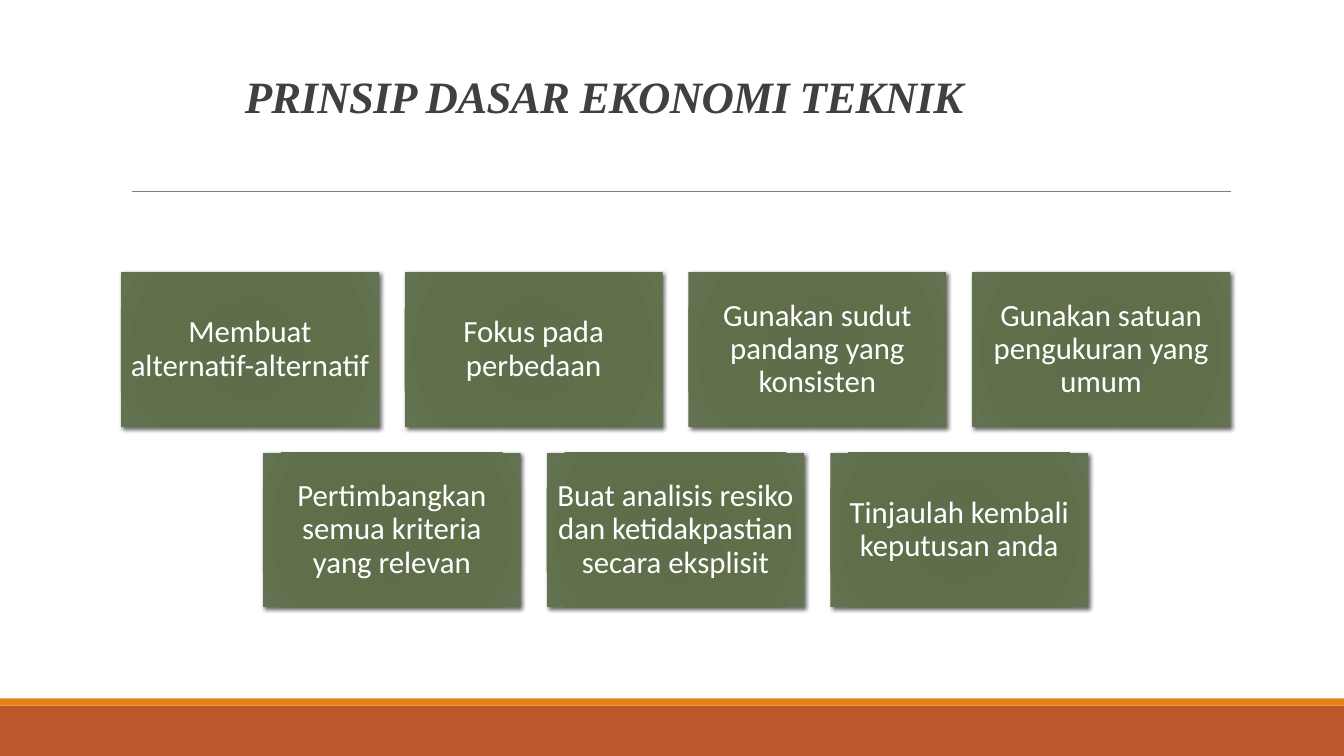
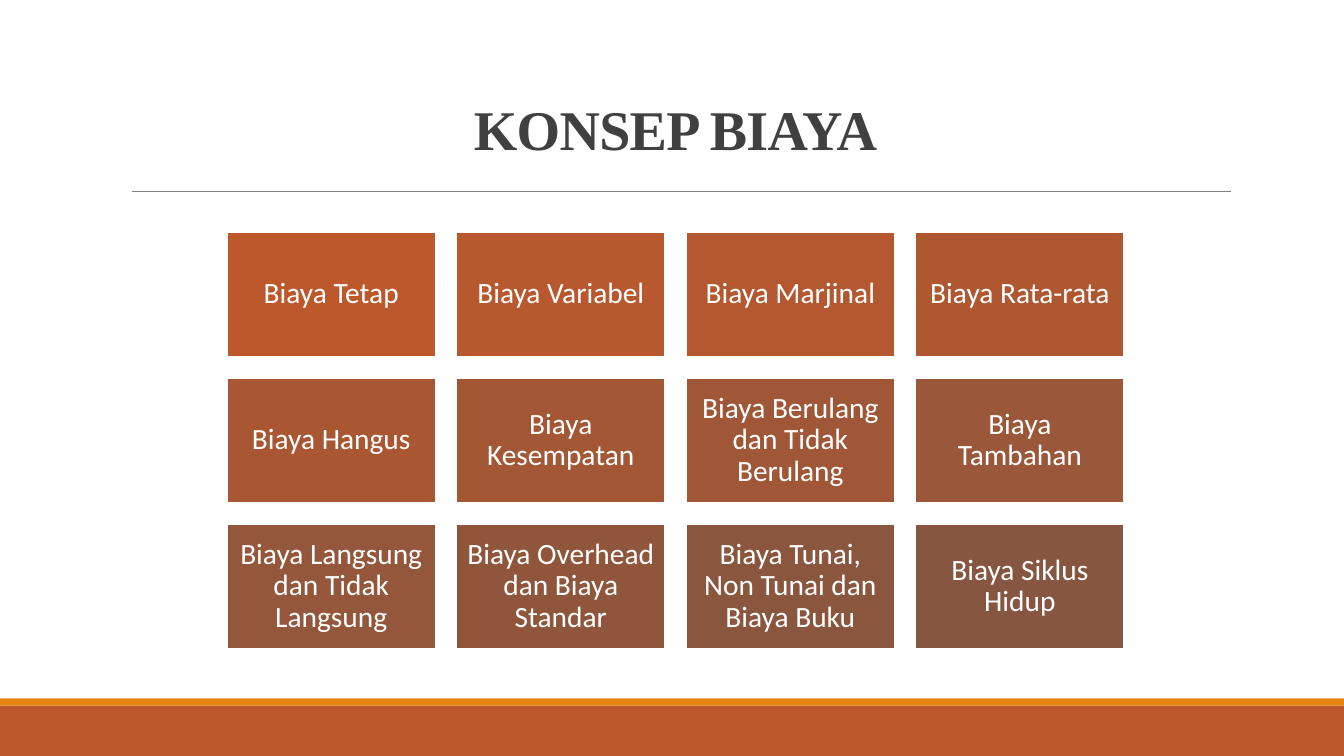
from dataclasses import dataclass

from lxml.etree import SubElement
from pptx import Presentation
from pptx.dml.color import RGBColor
from pptx.enum.shapes import MSO_CONNECTOR, MSO_SHAPE
from pptx.enum.text import MSO_ANCHOR, PP_ALIGN
from pptx.oxml import parse_xml
from pptx.oxml.ns import nsdecls, qn
from pptx.util import Inches, Pt

# Shared measures, in inches
SLIDE_WIDTH, SLIDE_HEIGHT = 13.33, 7.5
GRID_CENTER = 6.7
GRID_COLUMNS = 4
GAP_SHARE = 0.1  # gap between boxes as a share of box width
HEIGHT_SHARE = 0.6  # box height as a share of box width
BOX_INSET = 0.09

# Shared colours and fonts
WHITE = RGBColor(0xFF, 0xFF, 0xFF)
RUST = RGBColor(0xBD, 0x58, 0x2C)
BROWN = RGBColor(0x86, 0x56, 0x40)
ORANGE = RGBColor(0xE4, 0x83, 0x12)
RULE_GRAY = RGBColor(0x80, 0x80, 0x80)
TITLE_GRAY = RGBColor(0x40, 0x40, 0x40)
BLACK = RGBColor(0, 0, 0)
GREEN_STOPS = (
    (0, RGBColor(0x5D, 0x6D, 0x48)),
    (34, RGBColor(0x5E, 0x6D, 0x4A)),
    (70, RGBColor(0x5F, 0x6F, 0x4A)),
    (100, RGBColor(0x63, 0x72, 0x50)),
)
TITLE_FONT = "Times New Roman"
BODY_FONT = "Calibri"


@dataclass(frozen=True)
class Title:
    text: str
    left: float
    width: float
    height: float
    size: int
    italic: bool = False
    alignment: PP_ALIGN = PP_ALIGN.LEFT
    top: float = 0.31


@dataclass(frozen=True)
class BoxGrid:
    rows: tuple[tuple[str, ...], ...]
    top: float
    width: float
    text_size: int
    green: bool


@dataclass(frozen=True)
class Page:
    title: Title
    grid: BoxGrid


PAGES = (
    Page(
        Title("PRINSIP DASAR EKONOMI TEKNIK", 2.33, 9.87, 0.96, 32, italic=True),
        BoxGrid(
            (
                (
                    "Membuat alternatif-alternatif",
                    "Fokus pada perbedaan",
                    "Gunakan sudut pandang yang konsisten",
                    "Gunakan satuan pengukuran yang umum",
                ),
                (
                    "Pertimbangkan semua kriteria yang relevan",
                    "Buat analisis resiko dan ketidakpastian secara eksplisit",
                    "Tinjaulah kembali keputusan anda",
                ),
            ),
            top=2.7, width=11, text_size=22, green=True,
        ),
    ),
    Page(
        Title("KONSEP BIAYA", 1.2, 11, 1.35, 40, alignment=PP_ALIGN.CENTER),
        BoxGrid(
            (
                ("Biaya Tetap", "Biaya Variabel", "Biaya Marjinal", "Biaya Rata-rata"),
                (
                    "Biaya Hangus",
                    "Biaya Kesempatan",
                    "Biaya Berulang dan Tidak Berulang",
                    "Biaya Tambahan",
                ),
                (
                    "Biaya Langsung dan Tidak Langsung",
                    "Biaya Overhead dan Biaya Standar",
                    "Biaya Tunai, Non Tunai dan Biaya Buku",
                    "Biaya Siklus Hidup",
                ),
            ),
            top=2.3, width=8.9, text_size=21, green=False,
        ),
    ),
)


def blend(start: RGBColor, end: RGBColor, share: float) -> RGBColor:
    return RGBColor(*(round(a + (b - a) * share) for a, b in zip(start, end)))


def add_rectangle(slide, left: float, top: float, width: float, height: float, color: RGBColor):
    shape = slide.shapes.add_shape(
        MSO_SHAPE.RECTANGLE, Inches(left), Inches(top), Inches(width), Inches(height)
    )
    shape.shadow.inherit = False
    shape.fill.solid()
    shape.fill.fore_color.rgb = color
    shape.line.fill.background()
    return shape


def write_text(shape, text: str, spacing: float, alignment: PP_ALIGN, font_format: dict, color: RGBColor):
    shape.text_frame.word_wrap = True
    paragraph = shape.text_frame.paragraphs[0]
    paragraph.alignment = alignment
    paragraph.line_spacing = spacing
    run = paragraph.add_run()
    run.text = text
    for name, value in font_format.items():
        setattr(run.font, name, value)
    run.font.color.rgb = color
    return run


def add_frame(slide) -> None:
    """Footer bands and the rule under the title."""
    add_rectangle(slide, 0, 7, SLIDE_WIDTH, 0.5, RUST)
    add_rectangle(slide, 0, 6.93, SLIDE_WIDTH, 0.07, ORANGE)
    rule = slide.shapes.add_connector(
        MSO_CONNECTOR.STRAIGHT, Inches(1.31), Inches(1.9), Inches(12.21), Inches(1.9)
    )
    rule.line.color.rgb = RULE_GRAY
    rule.line.width = Pt(0.5)
    SubElement(rule._element.spPr, qn("a:effectLst"))


def add_title(slide, title: Title) -> None:
    box = slide.shapes.add_textbox(
        Inches(title.left), Inches(title.top), Inches(title.width), Inches(title.height)
    )
    box.text_frame.vertical_anchor = MSO_ANCHOR.BOTTOM
    font_format = {
        "name": TITLE_FONT, "size": Pt(title.size), "bold": True, "italic": title.italic,
    }
    run = write_text(box, title.text, 0.85, title.alignment, font_format, TITLE_GRAY)
    run._r.get_or_add_rPr().set("spc", "-50")


def apply_green_style(shape) -> None:
    """Radial gradient and a soft shadow."""
    stops = "".join(
        f'<a:gs pos="{position * 1000}"><a:srgbClr val="{color}"/></a:gs>'
        for position, color in GREEN_STOPS
    )
    gradient = parse_xml(
        f'<a:gradFill {nsdecls("a")} rotWithShape="1"><a:gsLst>{stops}</a:gsLst>'
        '<a:path path="circle"><a:fillToRect l="100000" t="100000" r="100000" b="100000"/>'
        "</a:path></a:gradFill>"
    )
    properties = shape._element.spPr
    properties.replace(properties.find(qn("a:solidFill")), gradient)
    shadow = parse_xml(
        f'<a:outerShdw {nsdecls("a")} blurRad="{Pt(3)}" dist="{Pt(2)}" dir="2700000" '
        f'rotWithShape="0"><a:srgbClr val="{BLACK}"><a:alpha val="60000"/></a:srgbClr>'
        "</a:outerShdw>"
    )
    properties.find(qn("a:effectLst")).append(shadow)


def add_grid(slide, grid: BoxGrid) -> None:
    """Rows of boxes, each row centred on the grid."""
    box_width = grid.width / (GRID_COLUMNS + (GRID_COLUMNS - 1) * GAP_SHARE)
    box_height = box_width * HEIGHT_SHARE
    gap = box_width * GAP_SHARE
    last_index = sum(map(len, grid.rows)) - 1
    font_format = {"name": BODY_FONT, "size": Pt(grid.text_size)}
    index = 0
    for row_number, labels in enumerate(grid.rows):
        row_width = len(labels) * (box_width + gap) - gap
        top = grid.top + row_number * (box_height + gap)
        for column, label in enumerate(labels):
            left = GRID_CENTER - row_width / 2 + column * (box_width + gap)
            color = blend(RUST, BROWN, index / last_index)
            shape = add_rectangle(slide, left, top, box_width, box_height, color)
            if grid.green:
                apply_green_style(shape)
            else:
                shape.line.color.rgb = WHITE
                shape.line.width = Pt(1.25)
            frame = shape.text_frame
            frame.vertical_anchor = MSO_ANCHOR.MIDDLE
            for side in ("left", "top", "right", "bottom"):
                setattr(frame, f"margin_{side}", Inches(BOX_INSET))
            write_text(shape, label, 0.9, PP_ALIGN.CENTER, font_format, WHITE)
            index += 1


def main() -> None:
    presentation = Presentation()
    presentation.slide_width = Inches(SLIDE_WIDTH)
    presentation.slide_height = Inches(SLIDE_HEIGHT)
    blank_layout = presentation.slide_layouts[6]
    for page in PAGES:
        slide = presentation.slides.add_slide(blank_layout)
        add_frame(slide)
        add_title(slide, page.title)
        add_grid(slide, page.grid)
    presentation.save("out.pptx")


if __name__ == "__main__":
    main()
